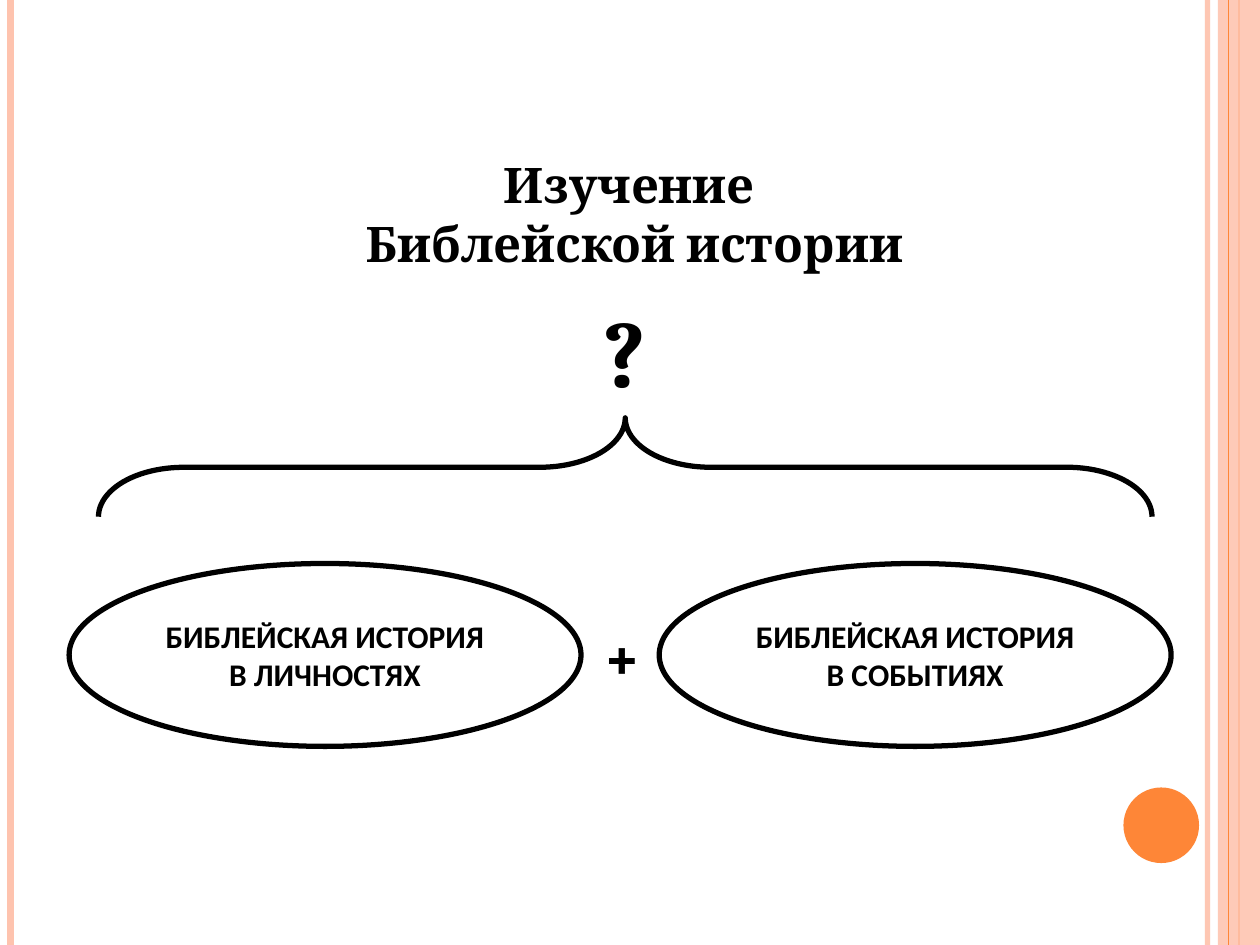
from lxml.etree import SubElement
from pptx import Presentation
from pptx.dml.color import RGBColor
from pptx.enum.shapes import MSO_CONNECTOR, MSO_SHAPE
from pptx.enum.text import MSO_ANCHOR, MSO_AUTO_SIZE, PP_ALIGN
from pptx.oxml.ns import qn
from pptx.util import Pt

COLORS = {"ink": "000000", "peach": "FEC3AE", "orange": "FE8637"}
WIDTH, HEIGHT = 720, 540


def color(name):
    """Return the named colour."""
    return RGBColor.from_string(COLORS[name])


def set_opacity(element, percent):
    """Make the solid fill inside an element partly transparent."""
    tint = next(element.iter(qn("a:srgbClr")))
    SubElement(tint, qn("a:alpha"), val=str(percent * 1000))


def add_stripe(page, x, weight, name, opacity=100):
    """Draw a full-height vertical line."""
    stripe = page.shapes.add_connector(
        MSO_CONNECTOR.STRAIGHT, Pt(x), Pt(0), Pt(x), Pt(HEIGHT))
    stripe.line.color.rgb = color(name)
    stripe.line.width = Pt(weight)
    properties = stripe._element.spPr
    SubElement(properties, qn("a:effectLst"))
    if opacity < 100:
        set_opacity(properties, opacity)


def add_filled(page, kind, bounds, name, opacity=100):
    """Draw a filled shape without an outline."""
    shape = page.shapes.add_shape(kind, *map(Pt, bounds))
    shape.shadow.inherit = False
    shape.fill.solid()
    shape.fill.fore_color.rgb = color(name)
    shape.line.fill.background()
    if opacity < 100:
        set_opacity(shape._element.spPr, opacity)


def add_outline(page, kind, bounds):
    """Draw an unfilled shape with a heavy black outline."""
    shape = page.shapes.add_shape(kind, *map(Pt, bounds))
    shape.shadow.inherit = False
    shape.fill.background()
    shape.line.color.rgb = color("ink")
    shape.line.width = Pt(3)
    return shape


def write(shape, lines, size, font="Cambria", auto_size=MSO_AUTO_SIZE.SHAPE_TO_FIT_TEXT):
    """Write centred bold paragraphs into a shape."""
    frame = shape.text_frame
    frame.word_wrap = True
    frame.auto_size = auto_size
    frame.vertical_anchor = MSO_ANCHOR.MIDDLE
    for index, line in enumerate(lines):
        para = frame.add_paragraph() if index else frame.paragraphs[0]
        para.alignment = PP_ALIGN.CENTER
        span = para.add_run()
        span.text = line
        span.font.name = font
        span.font.size = Pt(size)
        span.font.bold = True
        span.font.color.rgb = color("ink")


def add_title(page, lines, bounds):
    """Place and fill the title placeholder."""
    title = page.shapes.title
    title.left, title.top, title.width, title.height = map(Pt, bounds)
    write(title, lines, 28)


def add_sign(page, sign, bounds, size):
    """Add a large single character."""
    write(page.shapes.add_textbox(*map(Pt, bounds)), [sign], size)


def add_topic(page, x, label):
    """Add an ellipse with a topic label."""
    topic = add_outline(page, MSO_SHAPE.OVAL, (x, 322, 292.5, 104.5))
    write(topic, [label], 18, "Calibri", MSO_AUTO_SIZE.NONE)


def add_brace(page):
    """Add the brace that opens down over both topics."""
    brace = add_outline(page, MSO_SHAPE.LEFT_BRACE, (329, -34, 56.5, 602))
    brace.rotation = 90
    brace.adjustments[0] = 0.86
    brace.adjustments[1] = 0.5


def add_frame(page):
    """Draw the side stripes and the corner disc."""
    add_stripe(page, 690, 3, "peach", 93)
    add_stripe(page, 6, 4.5, "peach")
    add_stripe(page, 708, 1.5, "orange")
    add_filled(page, MSO_SHAPE.RECTANGLE, (696, 0, WIDTH - 696, HEIGHT), "peach", 87)
    add_stripe(page, 702, 0.75, "orange")
    add_filled(page, MSO_SHAPE.OVAL, (642, 450, 43.2, 43.2), "orange")


def main():
    """Build the slide and save it."""
    deck = Presentation()
    deck.slide_width, deck.slide_height = Pt(WIDTH), Pt(HEIGHT)
    page = deck.slides.add_slide(deck.slide_layouts[5])
    add_frame(page)
    add_title(page, ["Изучение ", "Библейской истории"], (140.5, 84.5, 444, 75))
    add_brace(page)
    add_sign(page, "?", (332, 163.5, 50.5, 72.7), 54)
    add_sign(page, "+", (337.7, 348.5, 34, 51), 36)
    add_topic(page, 39.5, "БИБЛЕЙСКАЯ ИСТОРИЯ В ЛИЧНОСТЯХ")
    add_topic(page, 376.7, "БИБЛЕЙСКАЯ ИСТОРИЯ В СОБЫТИЯХ")
    deck.save("out.pptx")


if __name__ == "__main__":
    main()
